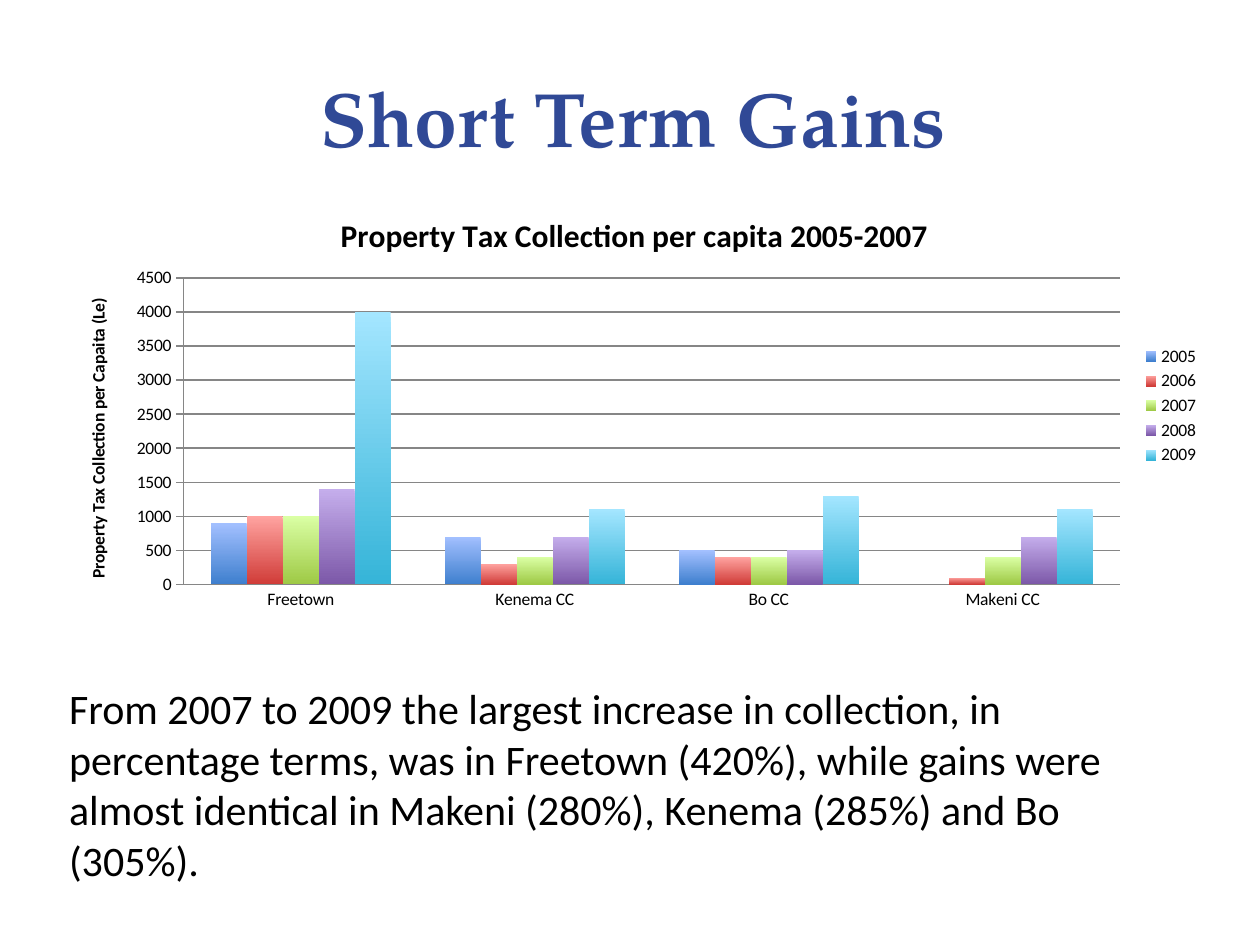
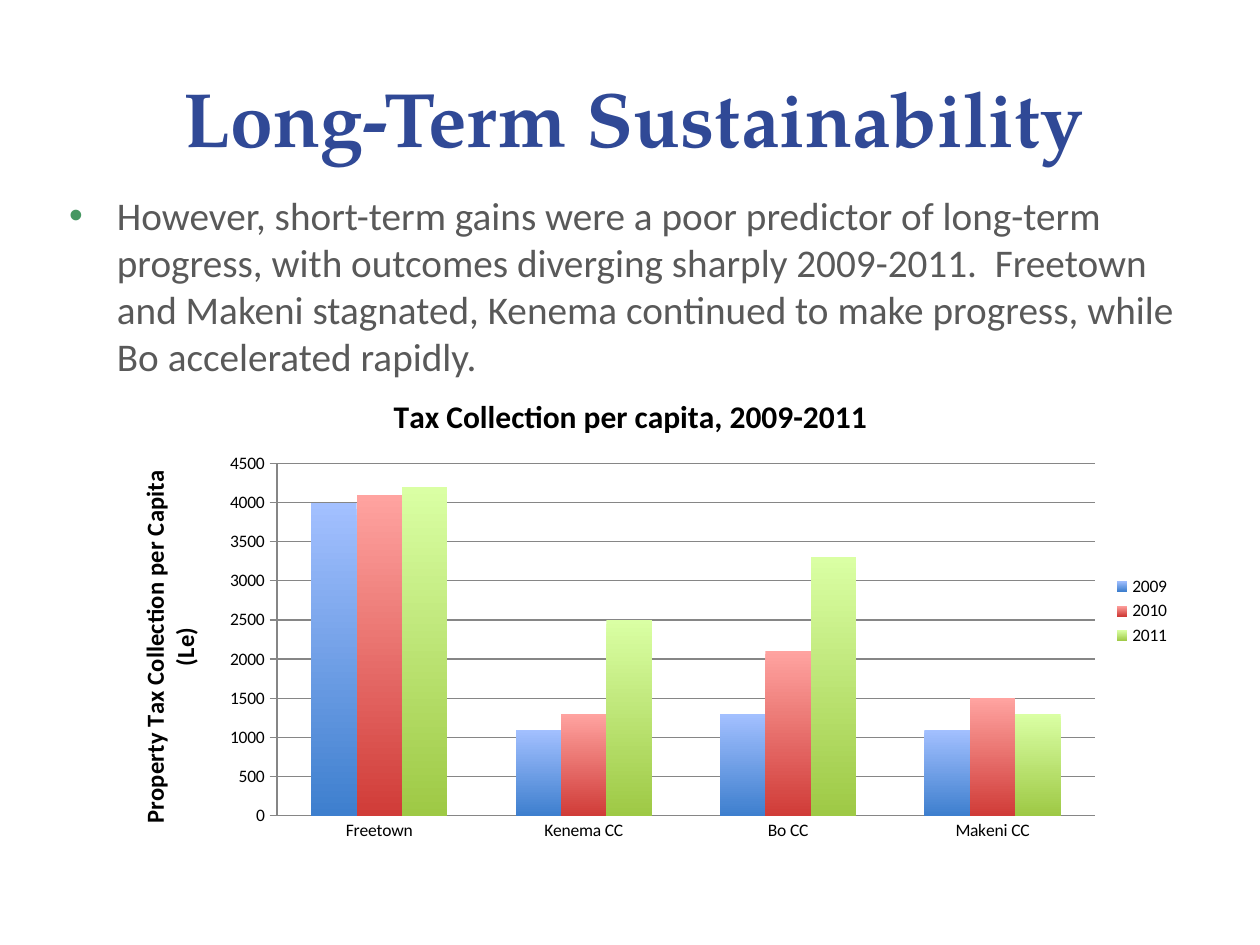
from dataclasses import dataclass

from lxml import etree
from pptx import Presentation
from pptx.chart.data import CategoryChartData
from pptx.dml.color import RGBColor
from pptx.enum.chart import XL_CHART_TYPE, XL_LEGEND_POSITION, XL_TICK_MARK
from pptx.enum.text import MSO_ANCHOR, PP_ALIGN
from pptx.oxml.ns import qn
from pptx.slide import Slide
from pptx.util import Inches, Pt

COLUMN = XL_CHART_TYPE.COLUMN_CLUSTERED
RIGHT = XL_LEGEND_POSITION.RIGHT
NO_TICK, OUT_TICK = XL_TICK_MARK.NONE, XL_TICK_MARK.OUTSIDE
CENTER, LEFT = PP_ALIGN.CENTER, PP_ALIGN.LEFT
MIDDLE, TOP = MSO_ANCHOR.MIDDLE, MSO_ANCHOR.TOP

COLORS = {
    "title": "304996", "text": "000000", "body": "595959",
    "bullet": "459761", "grid": "868686",
}
# Top and bottom colour of each bar series
BARS = [
    ("A3C0FF", "3E7FCE"), ("FFA3A0", "D03C38"), ("DAFFA4", "9EC945"),
    ("C5AEEC", "7C58A8"), ("A4E6FF", "35B4D8"),
]
SANS, SERIF = "Calibri", "TeX Gyre Pagella"
TOWNS = ["Freetown", "Kenema CC", "Bo CC", "Makeni CC"]
Box = tuple[float, float, float, float]


@dataclass
class Label:
    text: str
    box: Box
    size: float
    color: str
    font: str = SANS
    bold: bool = False
    align: PP_ALIGN = LEFT
    anchor: MSO_ANCHOR = TOP
    bullet: bool = False


@dataclass
class Graph:
    title: str
    unit: str
    unit_size: float
    box: Box
    plot: Box  # inner plot area, as fractions of the chart
    years: dict[str, list[int]]


def style(font, size: float, color: str, name: str = SANS, bold: bool = False) -> None:
    font.size, font.bold, font.name = Pt(size), bold, name
    font.color.rgb = RGBColor.from_string(COLORS[color])


def add_bullet(para) -> None:
    props = para._p.get_or_add_pPr()
    props.set("marL", str(Inches(0.38)))
    props.set("indent", str(Inches(-0.38)))
    tint = etree.SubElement(props, qn("a:buClr"))
    etree.SubElement(tint, qn("a:srgbClr"), val=COLORS["bullet"])
    etree.SubElement(props, qn("a:buFont"), typeface="Arial")
    etree.SubElement(props, qn("a:buChar"), char="•")


def add_label(slide: Slide, label: Label) -> None:
    frame = slide.shapes.add_textbox(*map(Inches, label.box)).text_frame
    frame.word_wrap = True
    frame.vertical_anchor = label.anchor
    frame.text = label.text
    para = frame.paragraphs[0]
    para.alignment = label.align
    if label.bullet:
        add_bullet(para)
    style(para.runs[0].font, label.size, label.color, label.font, label.bold)


def add_title(slide: Slide, text: str) -> None:
    add_label(slide, Label(text, (1.08, 0.3, 7.9, 1.25), 44, "title",
                           SERIF, True, CENTER, MIDDLE))


def set_plot(chart, plot: Box) -> None:
    area = chart._chartSpace.find(".//" + qn("c:plotArea"))
    for old in area.findall(qn("c:layout")):
        area.remove(old)
    layout = etree.Element(qn("c:layout"))
    area.insert(0, layout)
    manual = etree.SubElement(layout, qn("c:manualLayout"))
    rules = {"layoutTarget": "inner", "xMode": "edge", "yMode": "edge"}
    rules |= dict(zip("xywh", map(str, plot)))
    for tag, val in rules.items():
        etree.SubElement(manual, qn("c:" + tag), val=val)


def add_heading(owner, text: str, size: float) -> None:
    frame = owner.text_frame
    frame.text = text
    style(frame.paragraphs[0].runs[0].font, size, "text", bold=True)


def set_line(line) -> None:
    line.color.rgb = RGBColor.from_string(COLORS["grid"])
    line.width = Pt(0.75)


def add_graph(slide: Slide, graph: Graph) -> None:
    data = CategoryChartData()
    data.categories = TOWNS
    for year, values in graph.years.items():
        data.add_series(year, values)
    chart = slide.shapes.add_chart(COLUMN, *map(Inches, graph.box), data).chart
    style(chart.font, 10, "text")
    set_plot(chart, graph.plot)

    # Headings and legend
    chart.has_title = True
    add_heading(chart.chart_title, graph.title, 18)
    chart.has_legend = True
    chart.legend.position = RIGHT
    chart.legend.include_in_layout = False

    # Axes
    towns, money = chart.category_axis, chart.value_axis
    towns.major_tick_mark, money.major_tick_mark = NO_TICK, OUT_TICK
    money.minimum_scale, money.maximum_scale, money.major_unit = 0, 4500, 500
    add_heading(money.axis_title, graph.unit, graph.unit_size)
    for part in (towns, money, money.major_gridlines):
        set_line(part.format.line)

    # Bars
    bars = chart.plots[0]
    bars.gap_width, bars.overlap = 150, 0
    bars.vary_by_categories = False
    for series, shades in zip(bars.series, BARS):
        fill = series.format.fill
        fill.gradient()
        fill.gradient_angle = 270
        for stop, shade in zip(fill.gradient_stops, shades):
            stop.color.rgb = RGBColor.from_string(shade)


def main() -> None:
    deck = Presentation()
    deck.slide_width, deck.slide_height = Inches(10), Inches(7.5)
    blank = deck.slide_layouts[6]
    last = [4000, 1100, 1300, 1100]  # 2009 closes one chart and opens the next

    # Short-term gains
    slide = deck.slides.add_slide(blank)
    add_title(slide, "Short Term Gains")
    add_graph(slide, Graph(
        "Property Tax Collection per capita 2005-2007",
        "Property Tax Collection per Capaita (Le)", 10,
        (0.45, 1.53, 9.17, 3.38), (0.11, 0.2, 0.81, 0.72),
        {"2005": [900, 700, 500, 0], "2006": [1000, 300, 400, 100],
         "2007": [1000, 400, 400, 400], "2008": [1400, 700, 500, 700],
         "2009": last}))
    add_label(slide, Label(
        "From 2007 to 2009 the largest increase in collection, in percentage "
        "terms, was in Freetown (420%), while gains were almost identical in "
        "Makeni (280%), Kenema (285%) and Bo (305%).",
        (0.45, 5.37, 9, 1.72), 24, "text"))

    # Long-term sustainability
    slide = deck.slides.add_slide(blank)
    add_title(slide, "Long-Term Sustainability")
    add_label(slide, Label(
        "However, short-term gains were a poor predictor of long-term "
        "progress, with outcomes diverging sharply 2009-2011.  Freetown and "
        "Makeni stagnated, Kenema continued to make progress, while Bo "
        "accelerated rapidly.",
        (0.45, 1.47, 9, 1.29), 22.4, "body", bullet=True))
    add_graph(slide, Graph(
        "Tax Collection per capita, 2009-2011",
        "Property Tax Collection per Capita (Le)", 14,
        (0.62, 2.96, 8.77, 3.78), (0.18, 0.19, 0.74, 0.74),
        {"2009": last, "2010": [4100, 1300, 2100, 1500],
         "2011": [4200, 2500, 3300, 1300]}))

    deck.save("out.pptx")


if __name__ == "__main__":
    main()
